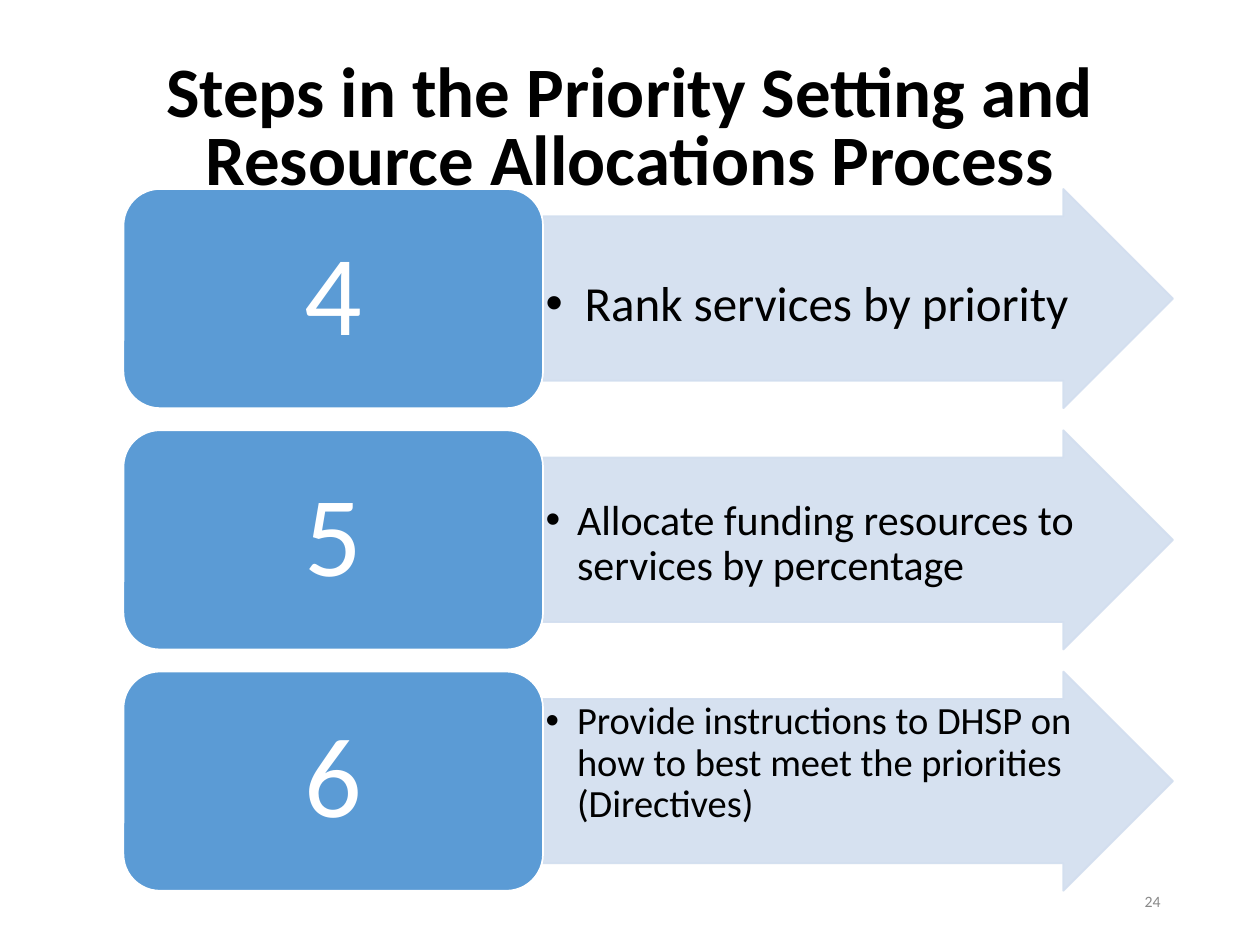
from lxml.etree import SubElement
from pptx import Presentation
from pptx.dml.color import RGBColor
from pptx.enum.shapes import MSO_SHAPE as Shape
from pptx.enum.text import MSO_ANCHOR as Anchor, MSO_AUTO_SIZE as AutoSize, PP_ALIGN as Align
from pptx.oxml.ns import qn
from pptx.util import Inches, Pt

BLACK = RGBColor(0x00, 0x00, 0x00)
WHITE = RGBColor(0xFF, 0xFF, 0xFF)
GRAY = RGBColor(0x89, 0x89, 0x89)
BLUE = RGBColor(0x5B, 0x9B, 0xD5)
PALE_BLUE = RGBColor(0xD2, 0xDE, 0xEF)

# Step rows
LEFT, TOP, BOTTOM = 0.98, 1.5, 7.07
BOX_WIDTH, ARROW_WIDTH, ROW_HEIGHT = 3.33, 5, 1.74

# Number, text, size, hanging indent, space above the text
STEPS = [
    ("4", "Rank services by priority", 28, 0.31, 0.5),
    ("5", "Allocate funding resources to services by percentage", 24, 0.25, 0.33),
    ("6", "Provide instructions to DHSP on how to best meet the priorities (Directives)",
     22, 0.25, 0.02),
]


class StepSlide:
    font = "Calibri"

    def __init__(self, presentation):
        self.slide = presentation.slides.add_slide(presentation.slide_layouts[5])

    def add_text(self, shape, text, size, color, align, spacing=1.0, bold=False,
                 anchor=Anchor.MIDDLE):
        frame = shape.text_frame
        frame.word_wrap = True
        frame.auto_size = AutoSize.NONE
        frame.vertical_anchor = anchor
        paragraph = frame.paragraphs[0]
        paragraph.alignment = align
        paragraph.line_spacing = spacing
        run = paragraph.add_run()
        run.text = text
        run.font.name = self.font
        run.font.size = Pt(size)
        run.font.bold = bold
        run.font.color.rgb = color
        return paragraph

    def title(self, text, left, top, width, height):
        shape = self.slide.shapes.title
        shape.left, shape.top = Inches(left), Inches(top)
        shape.width, shape.height = Inches(width), Inches(height)
        self.add_text(shape, text, 40.5, BLACK, Align.CENTER, 0.8, bold=True)

    def page_number(self, text, left, top, width, height):
        box = self.slide.shapes.add_textbox(
            Inches(left), Inches(top), Inches(width), Inches(height))
        self.add_text(box, text, 9, GRAY, Align.RIGHT)

    def block(self, kind, left, top, width, fill, line, insets):
        shape = self.slide.shapes.add_shape(
            kind, Inches(left), Inches(top), Inches(width), Inches(ROW_HEIGHT))
        shape.shadow.inherit = False
        shape.fill.solid()
        shape.fill.fore_color.rgb = fill
        shape.line.color.rgb = line
        shape.line.width = Pt(1)
        frame = shape.text_frame
        (frame.margin_left, frame.margin_top,
         frame.margin_right, frame.margin_bottom) = map(Inches, insets)
        return shape

    def arrow(self, text, size, indent, space_above, top):
        shape = self.block(Shape.RIGHT_ARROW, LEFT + BOX_WIDTH, top, ARROW_WIDTH,
                           PALE_BLUE, PALE_BLUE, (0.02, space_above, 0.02, 0.02))
        shape.adjustments[0], shape.adjustments[1] = 0.75, 0.5
        # Slightly transparent fill and line
        for color in shape.element.spPr.iter(qn("a:srgbClr")):
            SubElement(color, qn("a:alpha"), val="90000")
        paragraph = self.add_text(shape, text, size, BLACK, Align.LEFT, 0.9,
                                  anchor=Anchor.TOP)
        # Hanging bullet
        properties = paragraph._p.get_or_add_pPr()
        properties.set("marL", str(Inches(indent)))
        properties.set("indent", str(-Inches(indent)))
        SubElement(properties, qn("a:buFont"), typeface="Arial")
        SubElement(properties, qn("a:buChar"), char="•")

    def number_box(self, number, top):
        shape = self.block(Shape.ROUNDED_RECTANGLE, LEFT, top, BOX_WIDTH,
                           BLUE, WHITE, (0.27, 0.14, 0.27, 0.14))
        self.add_text(shape, number, 65, WHITE, Align.CENTER, 0.9)


def main():
    presentation = Presentation()
    presentation.slide_width, presentation.slide_height = Inches(10), Inches(7.5)
    page = StepSlide(presentation)

    # Heading and page number
    page.title("Steps in the Priority Setting and Resource Allocations Process",
               0.69, 0.42, 8.62, 1.24)
    page.page_number("24", 7.06, 6.95, 2.25, 0.4)

    # Numbered steps, evenly spread
    pitch = (BOTTOM - TOP - ROW_HEIGHT) / (len(STEPS) - 1)
    for row, (number, text, size, indent, space_above) in enumerate(STEPS):
        top = TOP + row * pitch
        page.arrow(text, size, indent, space_above, top)
        page.number_box(number, top)

    presentation.save("out.pptx")


if __name__ == "__main__":
    main()
